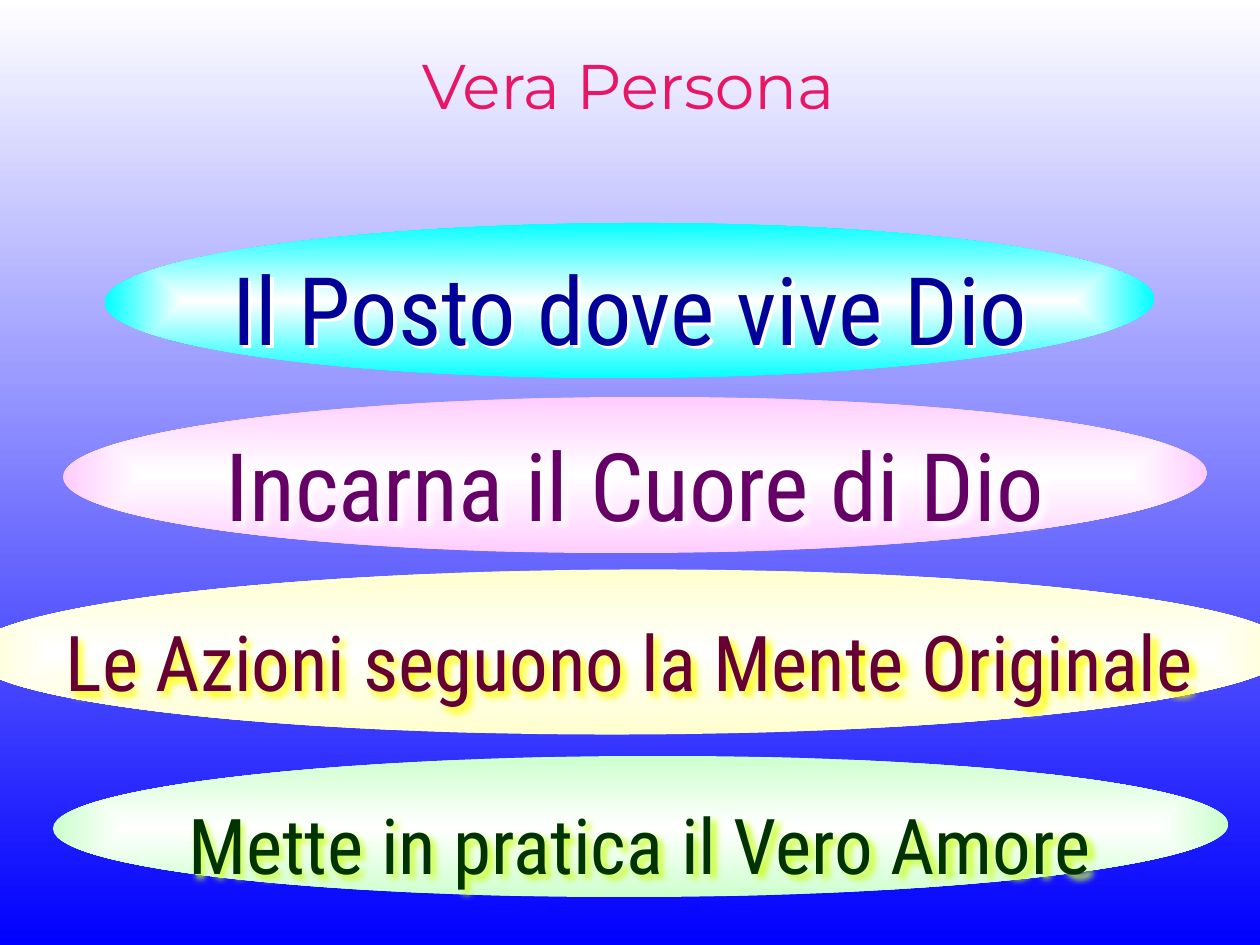
from lxml import etree
from pptx import Presentation
from pptx.dml import color
from pptx.enum import shapes, text
from pptx.oxml import ns
from pptx.util import Inches, Pt

ROWS = [
    ("Il Posto dove vive Dio", 54, "000099", "FFFFFF", 0, "00FFFF",
     (0.83, 1.77, 8.33, 1.23), (1.46, 1.91, 7.08, 1.01), 0.08),
    ("Incarna il Cuore di Dio", 54, "660066", "FFFFFF", 4, "FFCCFF",
     (0.5, 3.15, 9.08, 1.24), (0.78, 3.25, 8.52, 1.04), 0.14),
    ("Le Azioni seguono la Mente Originale", 44, "660033", "FFFF00", 4, "FFFFCC",
     (-0.25, 4.52, 10.5, 1.31), (0, 4.75, 10, 0.91), 0.13),
    ("Mette in pratica il Vero Amore", 44, "003300", "CCFF33", 4, "CCFFCC",
     (0.42, 6, 9.33, 1.12), (1.09, 6.17, 7.98, 0.91), 0.16),
]


def rgb(value):
    return color.RGBColor.from_string(value)


def set_gradient(fill, start, end):
    fill.gradient()
    for stop, value in zip(fill.gradient_stops, (start, end)):
        stop.color.rgb = rgb(value)


def add_child(parent, tag, **attributes):
    return etree.SubElement(parent, ns.qn(tag), attributes)


def center_gradient(shape):
    gradient = shape.element.spPr.find(ns.qn("a:gradFill"))
    gradient.remove(gradient.find(ns.qn("a:lin")))
    route = add_child(gradient, "a:path", path="shape")
    add_child(route, "a:fillToRect", l="50000", t="50000", r="50000", b="50000")


def add_text_shadow(shape, value, blur):
    effects = add_child(shape.element.spPr, "a:effectLst")
    shadow = add_child(effects, "a:outerShdw", blurRad=str(Pt(blur)),
                       dist=str(Pt(2.83)), dir="2700000", algn="ctr", rotWithShape="0")
    add_child(shadow, "a:srgbClr", val=value)


def write_line(frame, words, font, size, value):
    frame.word_wrap = True
    frame.auto_size = text.MSO_AUTO_SIZE.NONE
    frame.vertical_anchor = text.MSO_ANCHOR.TOP
    paragraph = frame.paragraphs[0]
    paragraph.alignment = text.PP_ALIGN.CENTER
    run = paragraph.add_run()
    run.text = words
    run.font.name = font
    run.font.size = Pt(size)
    run.font.color.rgb = rgb(value)


def set_title(slide):
    title = slide.shapes.title
    title.left, title.top = Inches(0.33), Inches(0.32)
    title.width, title.height = Inches(9.31), Inches(1.1)
    write_line(title.text_frame, "Vera Persona", "Montserrat", 36, "E81766")


def add_ellipse(group, box, edge):
    ellipse = group.shapes.add_shape(shapes.MSO_SHAPE.OVAL, *map(Inches, box))
    ellipse.rotation = -0.2
    ellipse.shadow.inherit = False
    ellipse.line.fill.background()
    set_gradient(ellipse.fill, "FFFFFF", edge)
    center_gradient(ellipse)


def add_label(group, box, words, size, value, shadow, blur, margin):
    label = group.shapes.add_textbox(*map(Inches, box))
    write_line(label.text_frame, words, "Roboto Condensed", size, value)
    label.text_frame.margin_top = Inches(margin)
    add_text_shadow(label, shadow, blur)


def main():
    presentation = Presentation()
    presentation.slide_width, presentation.slide_height = Inches(10), Inches(7.5)
    slide = presentation.slides.add_slide(presentation.slide_layouts[5])
    background = slide.background.fill
    set_gradient(background, "FFFFFF", "0000FF")
    background.gradient_angle = 270
    set_title(slide)
    for words, size, value, shadow, blur, edge, oval, box, margin in ROWS:
        group = slide.shapes.add_group_shape()
        add_ellipse(group, oval, edge)
        add_label(group, box, words, size, value, shadow, blur, margin)
    presentation.save("out.pptx")


if __name__ == "__main__":
    main()
